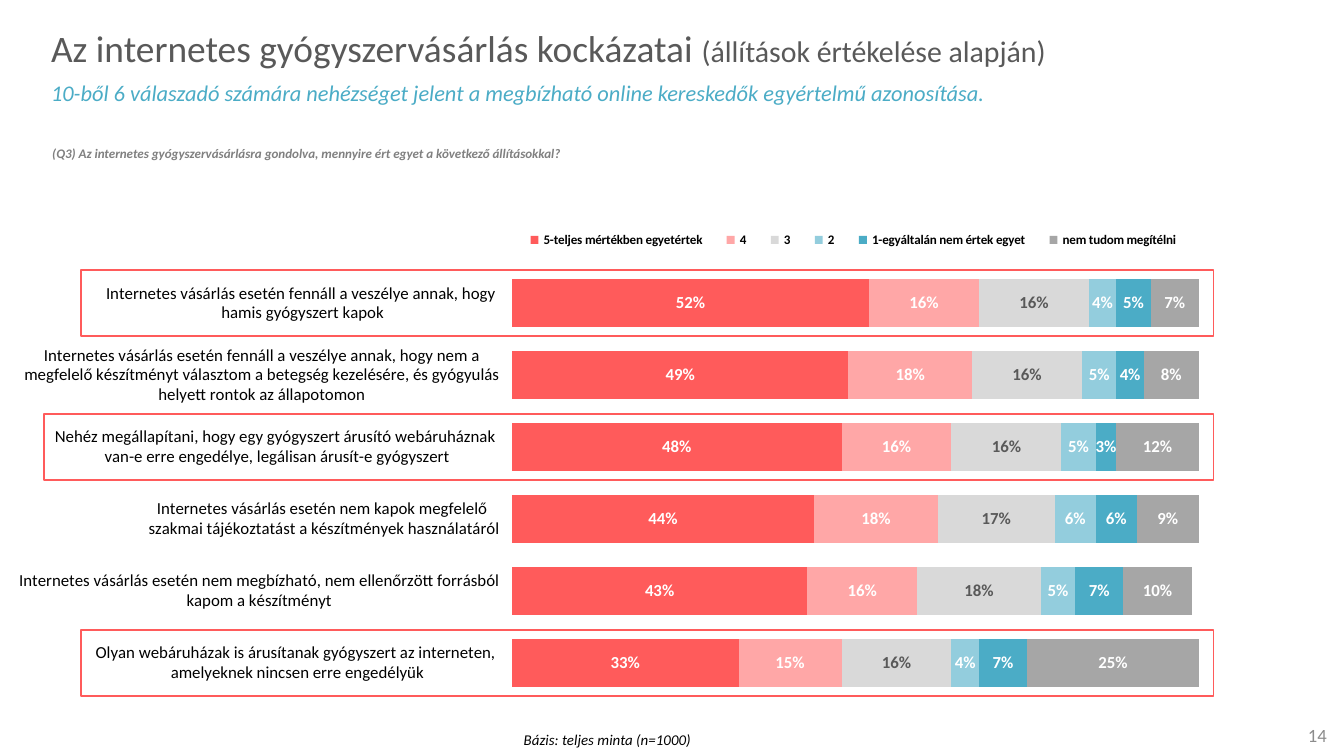
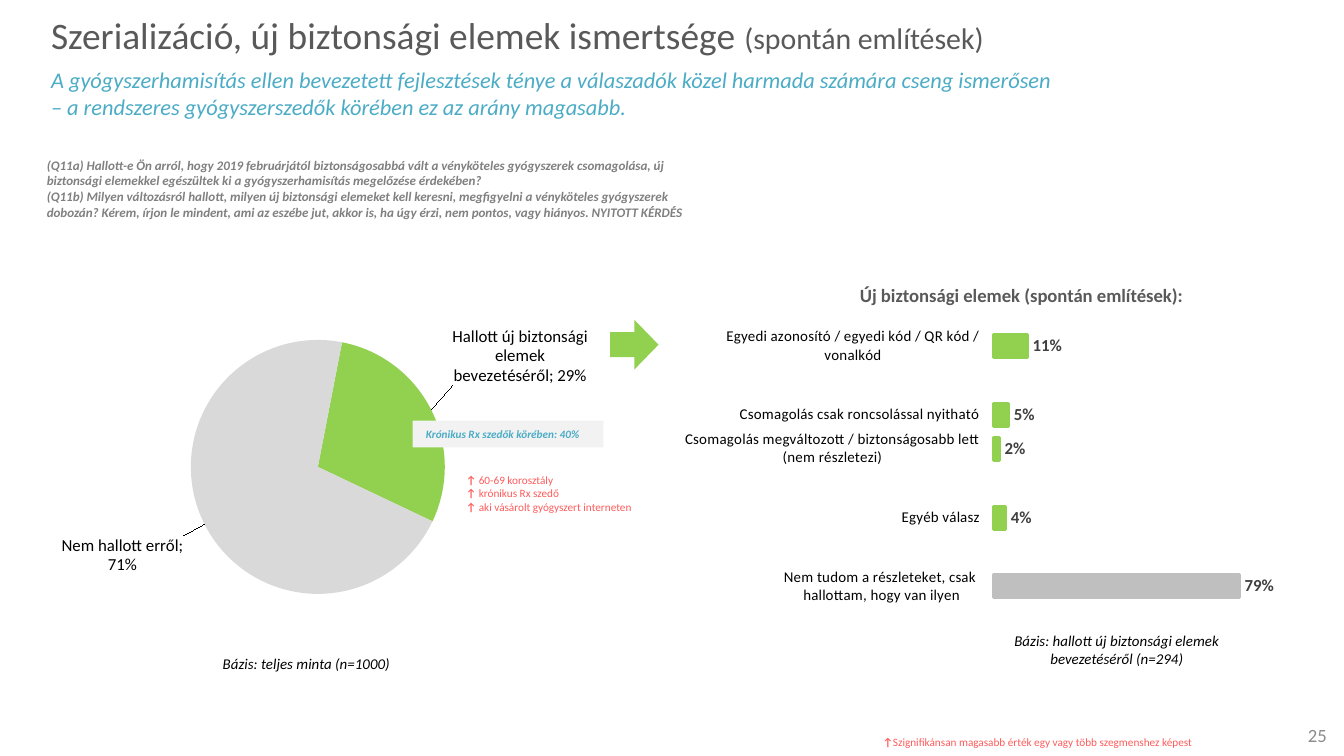
from dataclasses import dataclass

from lxml import etree
from pptx import Presentation
from pptx import util as u
from pptx.chart import data as chart_data
from pptx.dml.color import RGBColor
from pptx.enum import chart as charts, shapes, text
from pptx.oxml import parse_xml
from pptx.oxml.ns import nsdecls, qn

PX = 9144


@dataclass(frozen=True)
class Theme:
    """Colours and type sizes of the deck."""

    font: str = "Calibri"
    ink: str = "000000"
    heading: str = "595959"
    question: str = "808080"
    page: str = "8C8C8C"
    label: str = "404040"
    white: str = "FFFFFF"
    red: str = "FF5B5B"
    pink: str = "FFA7A7"
    silver: str = "D9D9D9"
    sky: str = "93CDDD"
    teal: str = "4BACC6"
    grey: str = "A6A6A6"
    rest: str = "BFBFBF"
    panel: str = "F2F2F2"
    green: str = "92D050"
    title_size: int = 20
    qualifier_size: int = 16
    message_size: int = 12
    subtitle_size: int = 10
    data_size: int = 9
    base_size: int = 8
    question_size: int = 7
    note_size: int = 6


def box(*lengths):
    """Turn px lengths into EMU."""
    return [u.Emu(length * PX) for length in lengths]


def set_font(font, size, color, bold=False, italic=False):
    """Give a font its complete format."""
    font.name = Theme.font
    font.size = u.Pt(size)
    font.bold = bold
    font.italic = italic
    font.color.rgb = RGBColor.from_string(color)


def write(paragraph, words, **style):
    """Add a formatted run to a paragraph."""
    run = paragraph.add_run()
    run.text = words
    set_font(run.font, **style)


def paint(form, fill=None, line=None, width=1):
    """Set the fill and outline of a shape or chart part."""
    for part, color in ((form.fill, fill), (form.line.fill, line)):
        if color:
            part.solid()
            part.fore_color.rgb = RGBColor.from_string(color)
        else:
            part.background()
    if line:
        form.line.width = u.Pt(width)


def place(parent, index, inner=False, **fractions):
    """Put a manual layout into a chart part at the given child index."""
    for old in parent.findall(qn("c:layout")):
        parent.remove(old)
    layout = parse_xml(f"<c:layout {nsdecls('c')}><c:manualLayout/></c:layout>")
    settings = [("layoutTarget", "inner")] if inner else []
    if "w" in fractions:
        settings += [("xMode", "edge"), ("yMode", "edge")]
    for tag, value in settings + list(fractions.items()):
        etree.SubElement(layout[0], qn(f"c:{tag}")).set("val", str(value))
    parent.insert(index, layout)


def within(area, part):
    """Express a px box inside a chart as fractions of the chart."""
    return {key: length / whole for key, length, whole in zip("xywh", part, area[2:] * 2)}


class Deck:
    """Holds the style and the current slide."""

    def __init__(self, theme):
        self.theme = theme
        self.file = Presentation()
        self.file.slide_width = u.Emu(1000 * PX)
        self.file.slide_height = u.Emu(self.file.slide_width * 9 // 16)
        self.slide = None

    def start(self, number, heading, qualifier, message, width):
        """Open a slide with its title, message and page number."""
        t = self.theme
        self.slide = self.file.slides.add_slide(self.file.slide_layouts[5])
        title = self.slide.shapes.title
        title.left, title.top, title.width, title.height = box(28, 16, width, 66)
        frame = title.text_frame
        frame.auto_size = text.MSO_AUTO_SIZE.NONE
        frame.vertical_anchor = text.MSO_ANCHOR.MIDDLE
        first, second = frame.paragraphs[0], frame.add_paragraph()
        write(first, heading + " ", size=t.title_size, color=t.heading)
        write(first, qualifier, size=t.qualifier_size, color=t.heading)
        write(second, message, size=t.message_size, color=t.teal, italic=True)
        second.space_before = u.Pt(5)
        for paragraph in frame.paragraphs:
            paragraph.alignment = text.PP_ALIGN.LEFT
        self.words((945, 532, 52, 30), [str(number)], align=text.PP_ALIGN.RIGHT,
                   anchor=text.MSO_ANCHOR.MIDDLE, size=t.subtitle_size, color=t.page)

    def words(self, area, lines, align=text.PP_ALIGN.LEFT, anchor=text.MSO_ANCHOR.TOP,
              wrap=True, mark="", holder=None, **style):
        """Write paragraphs, each after an optional bold mark, in a box or shape."""
        frame = (holder or self.slide.shapes.add_textbox(*box(*area))).text_frame
        frame.word_wrap = wrap
        frame.vertical_anchor = anchor
        for index, line in enumerate(lines):
            paragraph = frame.add_paragraph() if index else frame.paragraphs[0]
            paragraph.alignment = align
            if mark:
                write(paragraph, mark, **{**style, "bold": True})
            write(paragraph, line, **style)

    def question(self, area, *lines):
        """Quote the survey questions."""
        self.words(area, lines, size=self.theme.question_size,
                   color=self.theme.question, bold=True, italic=True)

    def base(self, area, sample):
        """State the sample behind a chart."""
        self.words(area, ["Bázis: " + sample], align=text.PP_ALIGN.CENTER,
                   size=self.theme.base_size, color=self.theme.ink, italic=True)

    def note(self, area, *lines, mark):
        """List significance notes behind an arrow mark."""
        self.words(area, lines, mark=mark, size=self.theme.note_size, color=self.theme.red)

    def shape(self, kind, area, **colors):
        """Draw a preset shape without shadow."""
        drawn = self.slide.shapes.add_shape(kind, *box(*area))
        drawn.shadow.inherit = False
        paint(drawn, **colors)
        return drawn

    def chart(self, kind, area, categories, series, plot, size):
        """Add a chart with a fixed plot area and the deck's font."""
        source = chart_data.CategoryChartData(number_format='0"%"')
        source.categories = categories
        for name, values in series:
            source.add_series(name, values)
        chart = self.slide.shapes.add_chart(kind, *box(*area), source).chart
        chart.has_title = False
        chart.has_legend = False
        set_font(chart.font, size, self.theme.ink)
        chart.plots[0].vary_by_categories = False
        place(chart._chartSpace.chart.plotArea, 0, inner=True, **within(area, plot))
        return chart

    def bars(self, kind, area, categories, series, plot, size, axis_size):
        """Add a horizontal bar chart with hidden value axis."""
        chart = self.chart(kind, area, categories, series, plot, size)
        chart.plots[0].gap_width = 50
        scale, names = chart.value_axis, chart.category_axis
        scale.minimum_scale, scale.maximum_scale = 0, 100
        scale.has_major_gridlines = False
        scale.visible = False
        names.reverse_order = True
        names.format.line.fill.background()
        set_font(names.tick_labels.font, axis_size, self.theme.ink)
        return chart

    def labels(self, series, color, bold=False):
        """Show percentages on a series."""
        labels = series.data_labels
        labels.show_value = True
        labels.number_format = '0"%"'
        labels.number_format_is_linked = False
        set_font(labels.font, self.theme.data_size, color, bold)
        return labels

    def callouts(self, series, shifts):
        """Move category-and-value pie labels outwards on leader lines."""
        labels = self.labels(series, self.theme.ink)
        labels.show_category_name = True
        for index in range(len(shifts)):
            label = series.points[index].data_label
            set_font(label.font, self.theme.data_size, self.theme.ink)
            label.position = charts.XL_LABEL_POSITION.BEST_FIT
        group = labels._element
        for label, (x, y) in zip(group.findall(qn("c:dLbl")), shifts):
            label.find(qn("c:showCatName")).set("val", "1")
            label.insert(1, parse_xml(
                f"<c:numFmt {nsdecls('c')} formatCode='0&quot;%&quot;' sourceLinked='0'/>"))
            place(label, 1, x=x, y=y)
        for owner in [group, *group.findall(qn("c:dLbl"))]:
            owner.find(qn("c:showBubbleSize")).addnext(
                parse_xml(f"<c:separator {nsdecls('c')}>; </c:separator>"))


def risks(deck):
    """Build the slide on the risks of buying medicine online."""
    t = deck.theme
    deck.start(14, "Az internetes gyógyszervásárlás kockázatai", "(állítások értékelése alapján)",
               "10-ből 6 válaszadó számára nehézséget jelent a megbízható online "
               "kereskedők egyértelmű azonosítása.", 886)
    statements = [
        "Internetes vásárlás esetén fennáll a veszélye annak, hogy \nhamis gyógyszert kapok",
        "Internetes vásárlás esetén fennáll a veszélye annak, hogy nem a megfelelő készítményt "
        "választom a betegség kezelésére, és gyógyulás helyett rontok az állapotomon",
        "Nehéz megállapítani, hogy egy gyógyszert árusító webáruháznak \n"
        "van-e erre engedélye, legálisan árusít-e gyógyszert",
        "Internetes vásárlás esetén nem kapok megfelelő \n"
        "szakmai tájékoztatást a készítmények használatáról",
        "Internetes vásárlás esetén nem megbízható, nem ellenőrzött forrásból "
        "kapom a készítményt",
        "Olyan webáruházak is árusítanak gyógyszert az interneten, \n"
        "amelyeknek nincsen erre engedélyük",
    ]
    answers = [
        ("5-teljes mértékben egyetértek", (52, 49, 48, 44, 43, 33), t.red),
        ("4", (16, 18, 16, 18, 16, 15), t.pink),
        ("3", (16, 16, 16, 17, 18, 16), t.silver),
        ("2", (4, 5, 5, 6, 5, 4), t.sky),
        ("1-egyáltalán nem értek egyet", (5, 4, 3, 6, 7, 7), t.teal),
        ("nem tudom megítélni", (7, 8, 12, 9, 10, 25), t.grey),
    ]
    area = (7, 100, 885, 443)
    agreement = deck.bars(charts.XL_CHART_TYPE.BAR_STACKED, area, statements,
                          [answer[:2] for answer in answers], (374, 99, 511, 321),
                          t.data_size, t.data_size)
    agreement.plots[0].overlap = 100
    for series, (_, _, color) in zip(agreement.plots[0].series, answers):
        paint(series.format, fill=color)
        deck.labels(series, t.heading if color == t.silver else t.white, bold=True)
    agreement.has_legend = True
    legend = agreement.legend
    legend.position = charts.XL_LEGEND_POSITION.TOP
    legend.include_in_layout = False
    set_font(legend.font, t.question_size, t.ink, bold=True)
    place(legend._element, 1, **within(area, (372, 70, 512, 17)))

    for left, top in ((60, 201), (60, 469), (33, 308)):
        deck.shape(shapes.MSO_SHAPE.RECTANGLE, (left, top, 903 - left, 49), line=t.red)
    deck.question((29, 103, 888, 22), "(Q3) Az internetes gyógyszervásárlásra gondolva, "
                  "mennyire ért egyet a következő állításokkal?")
    deck.base((351, 539, 202, 24), "teljes minta (n=1000)")


def awareness(deck):
    """Build the slide on awareness of the new safety features."""
    t = deck.theme
    deck.start(25, "Szerializáció, új biztonsági elemek ismertsége", "(spontán említések)",
               "A gyógyszerhamisítás ellen bevezetett fejlesztések ténye a válaszadók közel "
               "harmada számára cseng ismerősen – a rendszeres gyógyszerszedők körében ez az "
               "arány magasabb.", 768)
    deck.base((127, 482, 202, 24), "teljes minta (n=1000)")
    deck.question(
        (25, 112, 506, 57),
        "(Q11a) Hallott-e Ön arról, hogy 2019 februárjától biztonságosabbá vált a vényköteles "
        "gyógyszerek csomagolása, új biztonsági elemekkel egészültek ki a gyógyszerhamisítás "
        "megelőzése érdekében?",
        "(Q11b) Milyen változásról hallott, milyen új biztonsági elemeket kell keresni, "
        "megfigyelni a vényköteles gyógyszerek dobozán? Kérem, írjon le mindent, ami az eszébe "
        "jut, akkor is, ha úgy érzi, nem pontos, vagy hiányos. NYITOTT KÉRDÉS")

    heard = deck.chart(charts.XL_CHART_TYPE.PIE, (25, 177, 529, 307),
                       ["Hallott új biztonsági elemek bevezetéséről", "Nem hallott erről"],
                       [("Series 1", (29, 71))], (117, 53, 189, 235), t.base_size)
    share = heard.plots[0].series[0]
    for index, color in enumerate((t.green, t.silver)):
        paint(share.points[index].format, fill=color)
    deck.callouts(share, ((0.02, -0.05), (-0.02, 0.02)))
    pie = heard._chartSpace.chart.plotArea.find(qn("c:pieChart"))
    for angle in pie.findall(qn("c:firstSliceAng")):
        pie.remove(angle)
    etree.SubElement(pie, qn("c:firstSliceAng")).set("val", "11")

    features = [
        ("Egyedi azonosító / egyedi kód / QR kód / vonalkód", 11),
        (" ", None),
        ("Csomagolás csak roncsolással nyitható", 5),
        ("Csomagolás megváltozott / biztonságosabb lett (nem részletezi)", 2),
        (" ", None),
        ("Egyéb válasz", 4),
        ("", None),
        ("Nem tudom a részleteket, csak \nhallottam, hogy van ilyen", 79),
    ]
    names, values = zip(*features)
    mentions = deck.bars(charts.XL_CHART_TYPE.BAR_CLUSTERED, (508, 244, 476, 217), names,
                         [("Series 1", values)], (231, 0, 232, 205), 11, t.base_size)
    mentioned = mentions.plots[0].series[0]
    mentioned.invert_if_negative = False
    for part, color in ((mentioned, t.green), (mentioned.points[7], t.rest)):
        paint(part.format, fill=color, line=color, width=1.64)
    labels = deck.labels(mentioned, t.label, bold=True)
    labels.position = charts.XL_LABEL_POSITION.OUTSIDE_END

    deck.shape(shapes.MSO_SHAPE.RIGHT_ARROW, (454, 238, 36, 37), fill=t.green)
    deck.base((730, 465, 202, 37), "hallott új biztonsági elemek bevezetéséről (n=294)")
    deck.words((630, 206, 264, 27), ["Új biztonsági elemek (spontán említések):"], wrap=False,
               size=t.subtitle_size, color=t.heading, bold=True)
    deck.note((337, 347, 165, 40), "60-69 korosztály", "krónikus Rx szedő",
              "aki vásárolt gyógyszert interneten", mark="↑ ")
    deck.note((647, 542, 259, 20),
              "Szignifikánsan magasabb érték egy vagy több szegmenshez képest", mark="↑")
    chronic = deck.shape(shapes.MSO_SHAPE.RECTANGLE, (307, 313, 142, 20), fill=t.panel)
    deck.words(None, ["Krónikus Rx szedők körében: 40%"], holder=chronic,
               size=t.note_size, color=t.teal, bold=True, italic=True)


def main():
    """Build both slides and save the deck."""
    deck = Deck(Theme())
    risks(deck)
    awareness(deck)
    deck.file.save("out.pptx")


if __name__ == "__main__":
    main()
